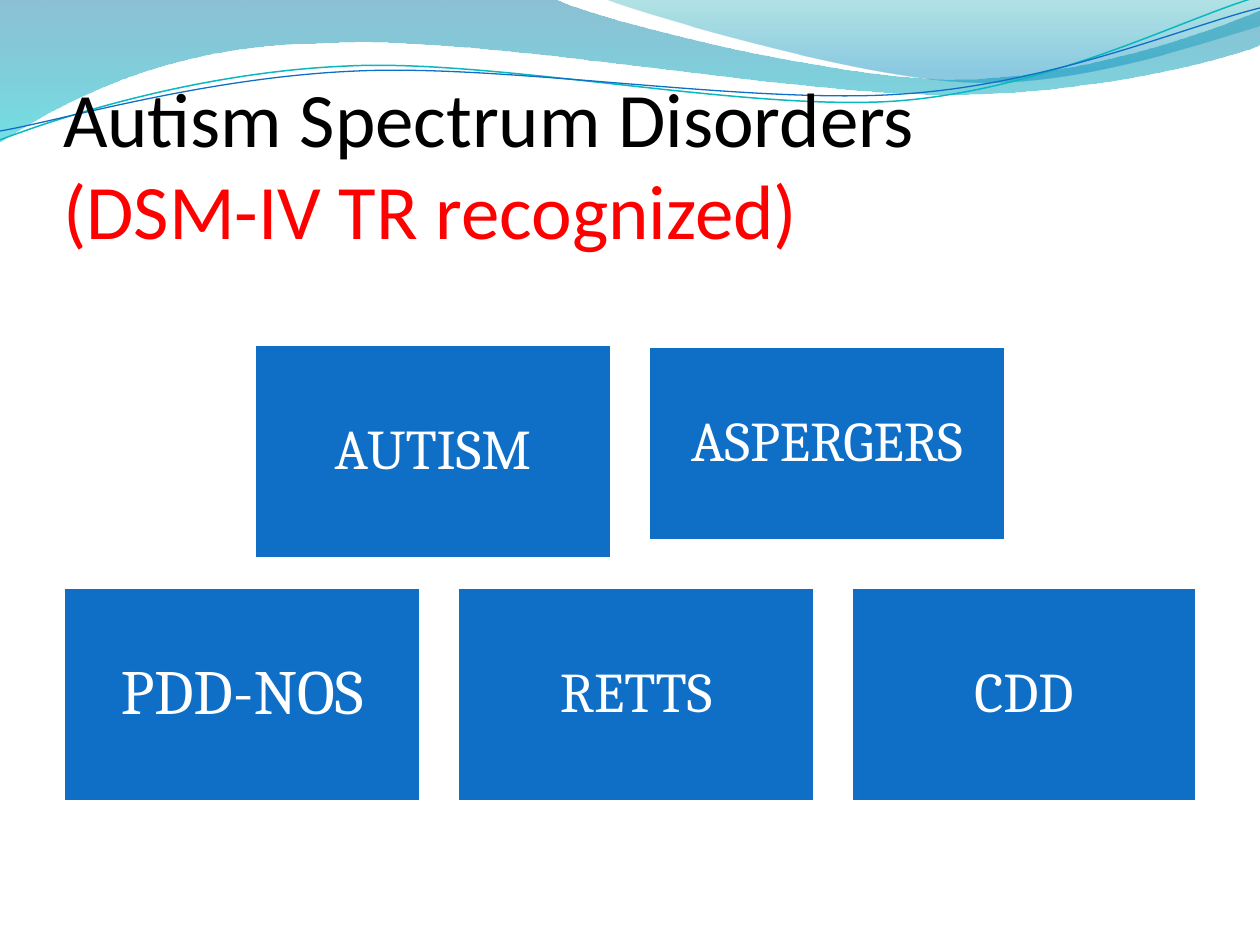
from dataclasses import dataclass
from math import cos, radians, sin
from typing import Optional

from lxml import etree
from pptx import Presentation
from pptx.dml.color import RGBColor
from pptx.enum.shapes import MSO_SHAPE
from pptx.enum.text import MSO_ANCHOR, PP_ALIGN
from pptx.oxml.ns import qn
from pptx.util import Pt

PX = 914400 / 126
RECT = MSO_SHAPE.RECTANGLE
LEFT, CENTER = PP_ALIGN.LEFT, PP_ALIGN.CENTER
MIDDLE, BOTTOM = MSO_ANCHOR.MIDDLE, MSO_ANCHOR.BOTTOM
TILT = 357.3

COLORS = {
    "white": "FFFFFF", "black": "000000", "red": "FF0000",
    "blue": "0F6FC6", "teal": "0AB8BF",
    "deep_blue": "0074A1", "cyan": "00C6CF",
    "sea": "00A1A9", "sky": "008BBF",
}


@dataclass
class Stop:
    position: float
    color: str
    opacity: int


@dataclass
class Wave:
    """Segments hold one point for a line, three for a Bezier curve."""
    start: tuple
    segments: list
    stops: Optional[list] = None
    line: Optional[str] = None
    weight: float = 0
    pivot: tuple = (0, 0)
    rotation: float = 0


@dataclass
class Box:
    label: str
    x: int
    y: int
    w: int = 358
    h: int = 215
    size: int = 32
    inset: int = 17


WAVES = [
    Wave((0, -1), [
        [(554, -1)],
        [(600, 21), (837, 79), (955, 79)],
        [(1075, 79), (1207, 33), (1260, 11)],
        [(1261, 45)],
        [(1239, 55), (1096, 96), (940, 94)],
        [(784, 94), (481, 35), (324, 43)],
        [(163, 44), (58, 105), (-1, 142)],
        [(0, -1)],
    ], stops=[Stop(0, "deep_blue", 45), Stop(1, "cyan", 55)]),
    Wave((604, -1), [
        [(641, 14), (859, 78), (969, 82)],
        [(1079, 87), (1211, 40), (1260, 26)],
        [(1260, 0)],
        [(604, -1)],
    ], stops=[Stop(0, "sea", 30), Stop(0.8, "sky", 45)]),
    Wave((0, 140), [
        [(60, 117), (199, 72), (349, 66)],
        [(498, 59), (747, 112), (898, 101)],
        [(1050, 89), (1182, 19), (1257, -3)],
    ], line="teal", weight=0.85, pivot=(629, 72), rotation=TILT),
    Wave((0, 131), [
        [(59, 121), (207, 77), (357, 71)],
        [(508, 64), (752, 105), (903, 94)],
        [(1053, 84), (1186, 26), (1260, 8)],
    ], line="blue", weight=0.75, pivot=(629, 74), rotation=TILT),
]

PITCH, TOP_X, BOTTOM_X, BOTTOM_Y = 394, 254, 63, 587
BOXES = [
    Box("AUTISM", TOP_X, 344),
    Box("ASPERGERS", TOP_X + PITCH, 346, h=195),
    Box("PDD-NOS", BOTTOM_X, BOTTOM_Y, size=36, inset=19),
    Box("RETTS", BOTTOM_X + PITCH, BOTTOM_Y),
    Box("CDD", BOTTOM_X + 2 * PITCH, BOTTOM_Y, w=346),
]


def px(n: int) -> int:
    return round(n * PX)


def rgb(name: str) -> RGBColor:
    return RGBColor.from_string(COLORS[name])


def add_text(p, text: str, *, size: int, font: str, color: str) -> None:
    r = p.add_run()
    r.text = text
    r.font.size, r.font.name = Pt(size), font
    r.font.color.rgb = rgb(color)


def format_frame(tf, anchor, margins: tuple) -> None:
    """Margins run left, top, right, bottom."""
    tf.word_wrap = True
    tf.vertical_anchor = anchor
    tf.margin_left, tf.margin_top, tf.margin_right, tf.margin_bottom = map(px, margins)


def turn_back(point: tuple, wave: Wave) -> tuple:
    """Place a point so that the shape's rotation brings it where it shows."""
    angle = radians(-wave.rotation)
    cx, cy = wave.pivot
    dx, dy = point[0] - cx, point[1] - cy
    return (cx + dx * cos(angle) - dy * sin(angle),
            cy + dx * sin(angle) + dy * cos(angle))


def bend_segments(sp, segments: list) -> None:
    """Merge each run of three line segments that stands for a curve."""
    lines = iter(list(sp.element.iter(qn("a:lnTo"))))
    for segment in segments:
        group = [next(lines) for _ in segment]
        if len(group) == 3:
            curve = etree.Element(qn("a:cubicBezTo"))
            group[0].addprevious(curve)
            for line in group:
                curve.append(line[0])
                line.getparent().remove(line)


def fill_gradient(sp, stops: list) -> None:
    """Fill from top to bottom with partly transparent stops."""
    sp.fill.gradient()
    sp.fill.gradient_angle = 270
    for target, stop in zip(sp.fill.gradient_stops, stops):
        target.position = stop.position
        target.color.rgb = rgb(stop.color)
    for clr, stop in zip(sp.element.spPr.iter(qn("a:srgbClr")), stops):
        etree.SubElement(clr, qn("a:alpha")).set("val", str(stop.opacity * 1000))


def add_wave(s, wave: Wave) -> None:
    points = [turn_back(point, wave) for segment in wave.segments for point in segment]
    builder = s.shapes.build_freeform(*turn_back(wave.start, wave), scale=PX)
    # Whole EMU inside the shape keep the curves smooth
    builder = s.shapes.build_freeform(*map(px, turn_back(wave.start, wave)), scale=1)
    builder.add_line_segments([tuple(map(px, point)) for point in points],
                              close=bool(wave.stops))
    sp = builder.convert_to_shape()
    bend_segments(sp, wave.segments)
    sp.rotation = wave.rotation
    sp.shadow.inherit = False
    if wave.stops:
        fill_gradient(sp, wave.stops)
        sp.line.fill.background()
    else:
        sp.fill.background()
        sp.line.color.rgb = rgb(wave.line)
        sp.line.width = Pt(wave.weight)


def add_title(s) -> None:
    title = s.shapes.title
    title.left, title.top, title.width, title.height = map(px, (63, 53, 1134, 202))
    s.shapes.element.append(title.element)  # bring in front of the waves
    tf = title.text_frame
    format_frame(tf, BOTTOM, (0, 6, 0, 0))
    p = tf.paragraphs[0]
    p.alignment = LEFT
    add_text(p, "Autism Spectrum Disorders ", size=44, font="Calibri", color="black")
    p.add_line_break()
    add_text(p, "(DSM-IV TR recognized)", size=44, font="Calibri", color="red")


def add_box(s, box: Box) -> None:
    sp = s.shapes.add_shape(RECT, *map(px, (box.x, box.y, box.w, box.h)))
    sp.shadow.inherit = False
    sp.fill.solid()
    sp.fill.fore_color.rgb = rgb("blue")
    sp.line.color.rgb = rgb("white")
    sp.line.width = Pt(2)
    format_frame(sp.text_frame, MIDDLE, (box.inset,) * 4)
    p = sp.text_frame.paragraphs[0]
    p.alignment, p.line_spacing = CENTER, 0.9
    add_text(p, box.label, size=box.size, font="Cambria", color="white")


def main() -> None:
    prs = Presentation()
    prs.slide_width, prs.slide_height = px(1260), px(945)
    s = prs.slides.add_slide(prs.slide_layouts[5])
    for wave in WAVES:
        add_wave(s, wave)
    add_title(s)
    for box in BOXES:
        add_box(s, box)
    prs.save("out.pptx")


if __name__ == "__main__":
    main()
